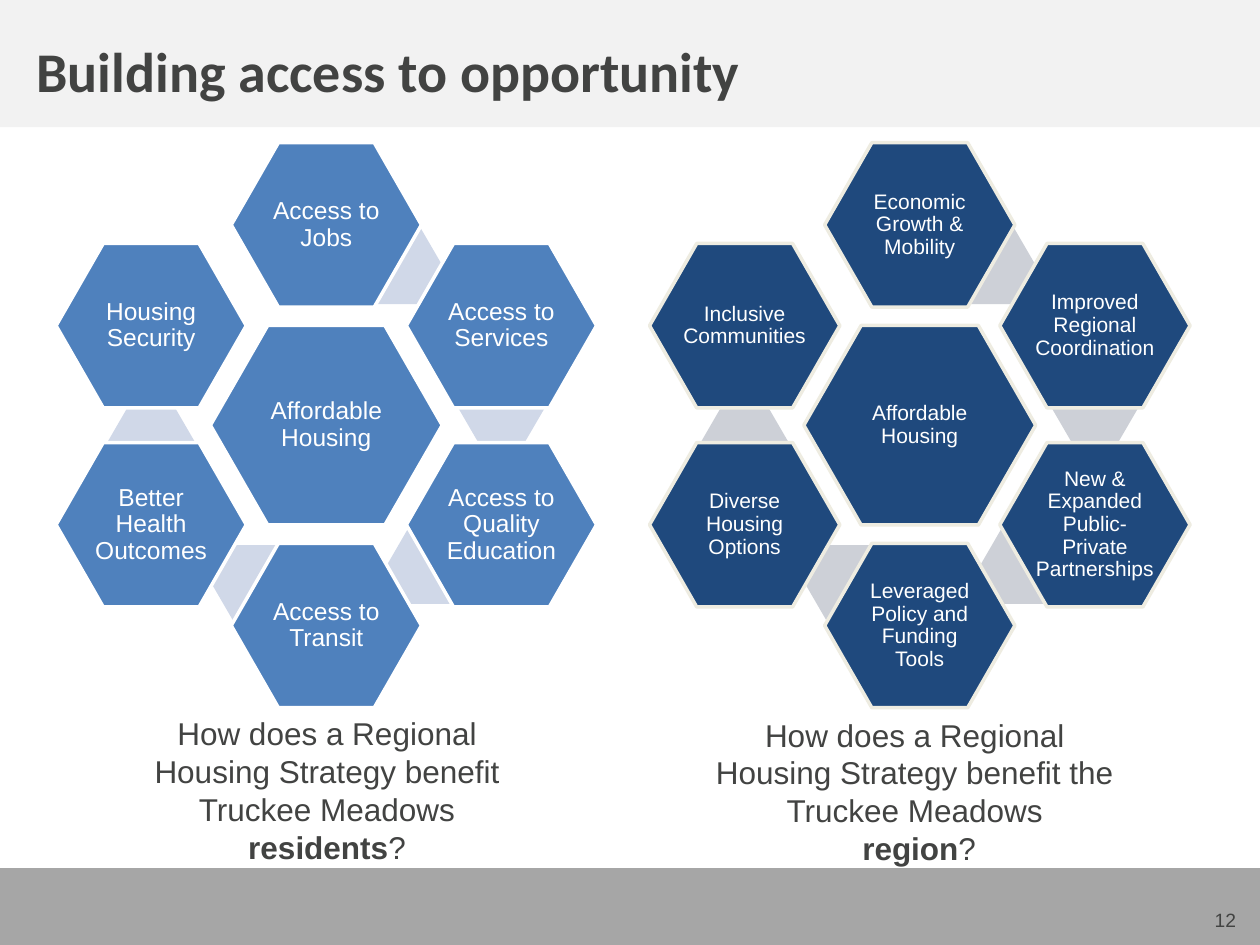
from pptx import Presentation
from pptx.dml.color import RGBColor
from pptx.enum.shapes import MSO_SHAPE as Shape
from pptx.enum.text import MSO_ANCHOR as Anchor, MSO_AUTO_SIZE as AutoSize, PP_ALIGN as Align
from pptx.util import Inches, Pt

WHITE = RGBColor(0xFF, 0xFF, 0xFF)
TEXT_GREY = RGBColor(0x42, 0x43, 0x42)
HEADER_GREY = RGBColor(0xF2, 0xF2, 0xF2)
FOOTER_GREY = RGBColor(0xA6, 0xA6, 0xA6)
BLUE = RGBColor(0x4F, 0x81, 0xBD)
PALE_BLUE = RGBColor(0xD0, 0xD8, 0xE8)
NAVY = RGBColor(0x1F, 0x49, 0x7D)
PALE_NAVY = RGBColor(0xCD, 0xD0, 0xD7)
CREAM = RGBColor(0xEE, 0xEC, 0xE1)

CENTER_Y = 3.375
CORE_SIZE = (1.84, 1.59)
PETAL_SIZE = (1.51, 1.31)
LINK_SIZE = (0.69, 0.6)
PETAL_OFFSETS = [(0, -1.59), (1.39, -0.79), (1.39, 0.79),
                 (0, 1.59), (-1.39, 0.79), (-1.39, -0.79)]
LINK_OFFSETS = [(0.58, -1.26), (1.39, -0.14), (0.82, 1.12),
                (-0.57, 1.25), (-1.39, 0.13)]


def set_insets(frame):
    frame.margin_left = frame.margin_right = 0
    frame.margin_top = frame.margin_bottom = 0
    frame.word_wrap = True


def style_paragraph(paragraph, size, color, align, font_name="Arial"):
    paragraph.alignment = align
    paragraph.font.name = font_name
    paragraph.font.size = Pt(size)
    paragraph.font.color.rgb = color


def add_band(slide, top, height, color):
    band = slide.shapes.add_shape(Shape.RECTANGLE, 0, Inches(top), Inches(10), Inches(height))
    band.shadow.inherit = False
    band.fill.solid()
    band.fill.fore_color.rgb = color
    band.line.fill.background()


def add_hexagon(slide, center, size, fill, adjust):
    (x, y), (width, height) = center, size
    hexagon = slide.shapes.add_shape(
        Shape.HEXAGON, Inches(x - width / 2), Inches(y - height / 2),
        Inches(width), Inches(height))
    hexagon.adjustments[0] = adjust
    hexagon.adjustments[1] = 1.15
    hexagon.shadow.inherit = False
    hexagon.fill.solid()
    hexagon.fill.fore_color.rgb = fill
    hexagon.line.fill.background()
    return hexagon


def add_topic(slide, center, size, label, fill, outline, font_size):
    topic = add_hexagon(slide, center, size, fill, 0.286)
    topic.line.color.rgb = outline
    topic.line.width = Pt(2)
    frame = topic.text_frame
    set_insets(frame)
    frame.vertical_anchor = Anchor.MIDDLE
    frame.text = label
    paragraph = frame.paragraphs[0]
    style_paragraph(paragraph, font_size, WHITE, Align.CENTER)
    paragraph.line_spacing = 0.9


def add_flower(slide, center_x, core, petals, fill, link_fill, outline, font_size):
    add_topic(slide, (center_x, CENTER_Y), CORE_SIZE, core, fill, outline, font_size)
    for index, (label, (dx, dy)) in enumerate(zip(petals, PETAL_OFFSETS)):
        if index < len(LINK_OFFSETS):
            link_dx, link_dy = LINK_OFFSETS[index]
            add_hexagon(slide, (center_x + link_dx, CENTER_Y + link_dy),
                        LINK_SIZE, link_fill, 0.289)
        add_topic(slide, (center_x + dx, CENTER_Y + dy), PETAL_SIZE, label,
                  fill, outline, font_size)


def add_text(slide, left, top, width, height):
    box = slide.shapes.add_textbox(Inches(left), Inches(top), Inches(width), Inches(height))
    set_insets(box.text_frame)
    return box.text_frame


def add_question(slide, left, top, width, lines, emphasis):
    frame = add_text(slide, left, top, width, 1.21)
    frame.text = "\n".join(lines)
    closing = frame.paragraphs[-1]
    closing.add_run().text = emphasis
    closing.runs[-1].font.bold = True
    closing.add_run().text = "?"
    for paragraph in frame.paragraphs:
        style_paragraph(paragraph, 18, TEXT_GREY, Align.CENTER)


def add_page_number(slide, number):
    frame = add_text(slide, 7.48, 6.99, 2.33, 0.4)
    frame.vertical_anchor = Anchor.BOTTOM
    frame.text = number
    style_paragraph(frame.paragraphs[0], 11, TEXT_GREY, Align.RIGHT)


def set_title(slide, text):
    title = slide.shapes.title
    title.left, title.top = Inches(0.29), Inches(0.29)
    title.width, title.height = Inches(8.55), Inches(0.54)
    frame = title.text_frame
    set_insets(frame)
    frame.auto_size = AutoSize.NONE
    frame.vertical_anchor = Anchor.TOP
    frame.text = text
    style_paragraph(frame.paragraphs[0], 32, TEXT_GREY, Align.LEFT, "Calibri")
    frame.paragraphs[0].font.bold = True
    title.element.getparent().append(title.element)


def main():
    deck = Presentation()
    deck.slide_width, deck.slide_height = Inches(10), Inches(7.5)
    slide = deck.slides.add_slide(deck.slide_layouts[5])

    add_band(slide, 6.89, 0.61, FOOTER_GREY)
    add_band(slide, 0, 1.01, HEADER_GREY)
    add_page_number(slide, "12")

    resident_benefits = ["Access to Jobs", "Access to Services", "Access to Quality Education",
                         "Access to Transit", "Better Health Outcomes", "Housing Security"]
    add_flower(slide, 2.59, "Affordable Housing", resident_benefits,
               BLUE, PALE_BLUE, WHITE, 14)
    add_question(slide, 1.05, 5.67, 3.09,
                 ["How does a Regional Housing Strategy benefit Truckee Meadows "], "residents")

    region_benefits = ["Economic Growth & Mobility", "Improved Regional Coordination",
                       "New & Expanded Public-Private Partnerships",
                       "Leveraged Policy and Funding Tools", "Diverse Housing Options",
                       "Inclusive Communities"]
    add_flower(slide, 7.3, "Affordable Housing", region_benefits,
               NAVY, PALE_NAVY, CREAM, 12)
    add_question(slide, 5.51, 5.68, 3.57,
                 ["How does a Regional ", "Housing Strategy benefit the ", "Truckee Meadows ", ""],
                 "region")

    set_title(slide, "Building access to opportunity")
    deck.save("out.pptx")


if __name__ == "__main__":
    main()
